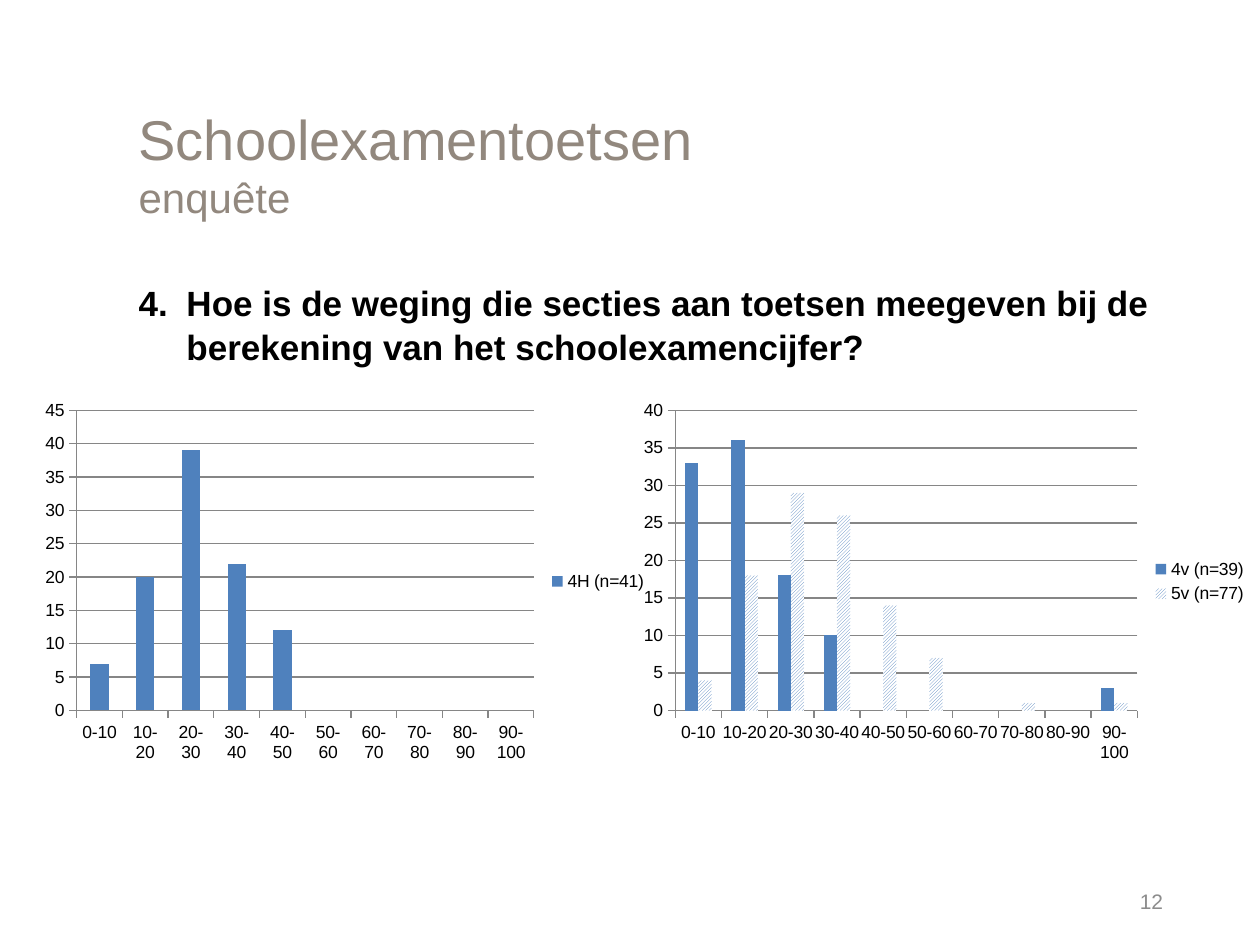
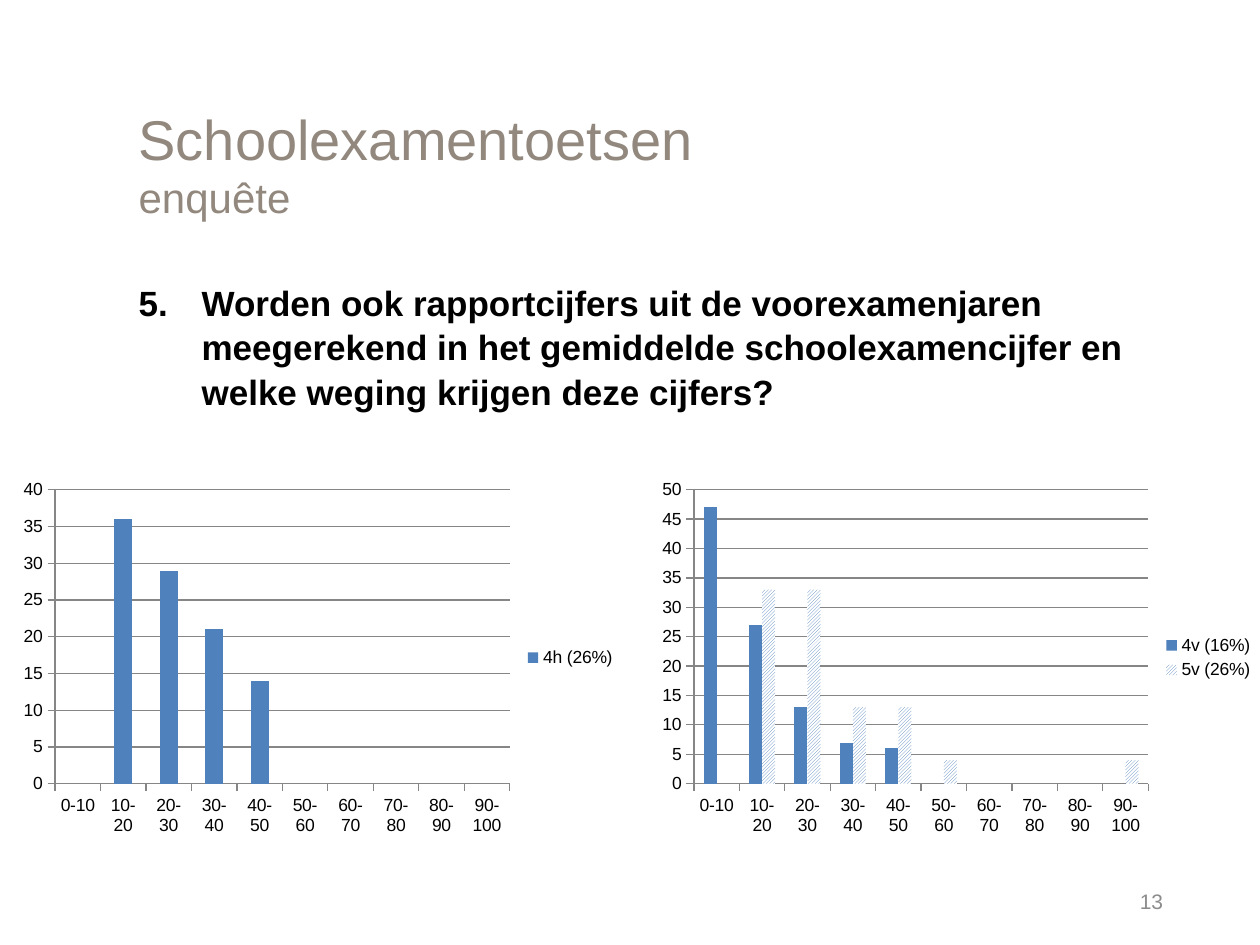
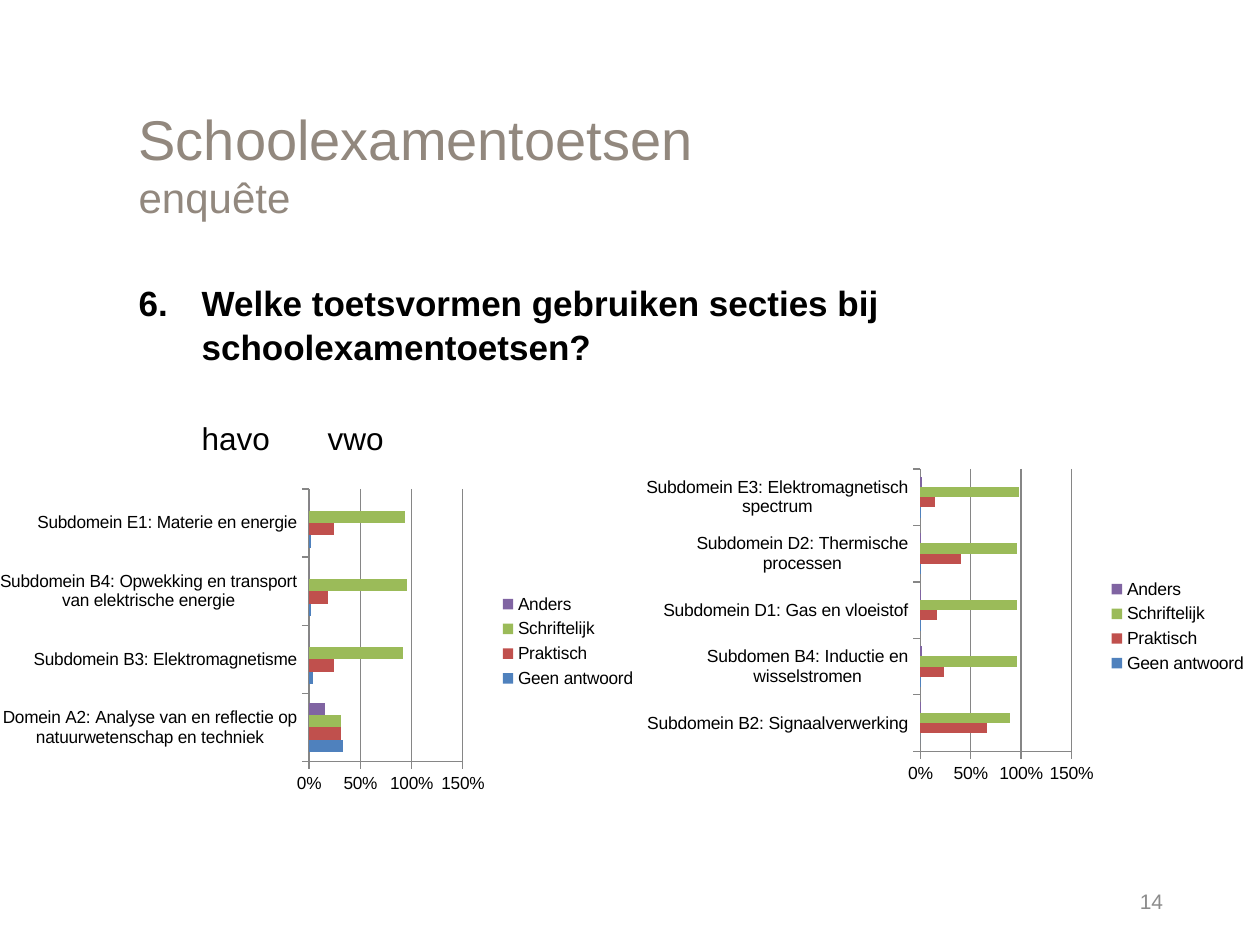
from lxml.etree import SubElement
from pptx import Presentation
from pptx.chart.data import CategoryChartData
from pptx.dml.color import RGBColor
from pptx.enum.chart import XL_CHART_TYPE, XL_LEGEND_POSITION, XL_TICK_MARK
from pptx.enum.dml import MSO_PATTERN
from pptx.enum.text import MSO_ANCHOR, MSO_AUTO_SIZE, PP_ALIGN
from pptx.oxml.ns import qn
from pptx.util import Inches, Pt

FONT = "Arial"
TAUPE, BLACK, WHITE, GRAY = "92887E", "000000", "FFFFFF", "8C8C8C"
BLUE, RED, GREEN, PURPLE = "4F81BD", "C0504D", "9BBB59", "8064A2"
AXIS_GRAY = "868686"
HATCHED = "hatched"

WEIGHT_RANGES = [f"{start}-{start + 10}" for start in range(0, 100, 10)]
HAVO_DOMAINS = [
    "Domein A2: Analyse van en reflectie op natuurwetenschap en techniek",
    "Subdomein B3: Elektromagnetisme",
    "Subdomein B4: Opwekking en transport van elektrische energie",
    "Subdomein E1: Materie en energie",
]
VWO_DOMAINS = [
    "Subdomein B2: Signaalverwerking",
    "Subdomen B4: Inductie en wisselstromen",
    "Subdomein D1: Gas en vloeistof",
    "Subdomein D2: Thermische processen",
    "Subdomein E3: Elektromagnetisch spectrum",
]
TEST_FORMS = [("Geen antwoord", BLUE), ("Praktisch", RED),
              ("Schriftelijk", GREEN), ("Anders", PURPLE)]


def rgb(value):
    return RGBColor.from_string(value)


def place(part, left, top, width, height):
    part.left, part.top = Inches(left), Inches(top)
    part.width, part.height = Inches(width), Inches(height)


def style_font(font, size, color, bold=False):
    font.name = FONT
    font.size = Pt(size)
    font.bold = bold
    font.color.rgb = rgb(color)


def add_run(paragraph, text, size, color, bold=False):
    run = paragraph.add_run()
    run.text = text
    style_font(run.font, size, color, bold)


def add_title(slide):
    title = slide.shapes.title
    place(title, 1, 0.67, 8.33, 1.25)
    frame = title.text_frame
    frame.auto_size = MSO_AUTO_SIZE.NONE
    frame.vertical_anchor = MSO_ANCHOR.MIDDLE
    heading = frame.paragraphs[0]
    heading.alignment = PP_ALIGN.LEFT
    add_run(heading, "Schoolexamentoetsen", 32, TAUPE)
    heading.add_line_break()
    add_run(heading, "enquête", 24, TAUPE)


def add_question(slide, number, text, indent):
    body = slide.placeholders[1]
    place(body, 1, 2.17, 8.33, 4.5)
    frame = body.text_frame
    frame.auto_size = MSO_AUTO_SIZE.NONE
    question = frame.paragraphs[0]
    properties = question._p.get_or_add_pPr()
    properties.set("marL", str(Inches(indent)))
    properties.set("indent", str(-Inches(indent)))
    SubElement(properties, qn("a:buFont"), typeface=FONT)
    SubElement(properties, qn("a:buAutoNum"), type="arabicPeriod", startAt=str(number))
    question.space_before = Pt(0)
    question.line_spacing = 1.05
    add_run(question, text, 20, BLACK, bold=True)
    return frame


def add_school_types(frame, labels):
    heading = frame.add_paragraph()
    properties = heading._p.get_or_add_pPr()
    properties.set("marL", "0")
    properties.set("indent", "0")
    SubElement(properties, qn("a:buNone"))
    stops = SubElement(properties, qn("a:tabLst"))
    for label, position in labels:
        SubElement(stops, qn("a:tab"), pos=str(Inches(position)), algn="l")
        add_run(heading, f"\t{label}", 18, BLACK)
    heading.space_before = Pt(29)


def add_page_number(slide, number):
    footer = slide.shapes.add_textbox(Inches(7.5), Inches(6.95), Inches(1.83), Inches(0.4))
    frame = footer.text_frame
    frame.word_wrap = True
    frame.vertical_anchor = MSO_ANCHOR.MIDDLE
    frame.paragraphs[0].alignment = PP_ALIGN.RIGHT
    add_run(frame.paragraphs[0], str(number), 12, GRAY)


def fill_series(series, color):
    fill = series.format.fill
    if color == HATCHED:
        fill.patterned()
        fill.pattern = MSO_PATTERN.LIGHT_UPWARD_DIAGONAL
        fill.fore_color.rgb = rgb(BLUE)
        fill.back_color.rgb = rgb(WHITE)
    else:
        fill.solid()
        fill.fore_color.rgb = rgb(color)
    series.invert_if_negative = False


def style_line(line):
    line.color.rgb = rgb(AXIS_GRAY)
    line.width = Pt(0.75)


def add_bars(slide, kind, area, categories, answers, number_format="General"):
    data = CategoryChartData(number_format=number_format)
    data.categories = categories
    for name, values, _ in answers:
        data.add_series(name, values)
    chart = slide.shapes.add_chart(kind, *map(Inches, area), data).chart
    style_font(chart.font, 10, BLACK)
    chart.has_title = False
    chart.has_legend = True
    chart.legend.position = XL_LEGEND_POSITION.RIGHT
    chart.legend.include_in_layout = False
    for axis in (chart.category_axis, chart.value_axis):
        axis.major_tick_mark = XL_TICK_MARK.OUTSIDE
        axis.minor_tick_mark = XL_TICK_MARK.NONE
        style_line(axis.format.line)
    chart.value_axis.has_major_gridlines = True
    style_line(chart.value_axis.major_gridlines.format.line)
    labels = chart.value_axis.tick_labels
    labels.number_format = number_format
    labels.number_format_is_linked = False
    plot = chart.plots[0]
    plot.gap_width = 150
    plot.overlap = 0
    plot.vary_by_categories = False
    for series, (_, _, color) in zip(plot.series, answers):
        fill_series(series, color)


def add_weights(slide, area, answers):
    padded = [(name, values + [None] * (len(WEIGHT_RANGES) - len(values)), color)
              for name, values, color in answers]
    add_bars(slide, XL_CHART_TYPE.COLUMN_CLUSTERED, area, WEIGHT_RANGES, padded)


def add_test_forms(slide, area, domains, shares):
    answers = [(name, values, color) for (name, color), values in zip(TEST_FORMS, shares)]
    add_bars(slide, XL_CHART_TYPE.BAR_CLUSTERED, area, domains, answers, "0%")


def add_survey_slide(deck, page, number, question, indent=0.5):
    slide = deck.slides.add_slide(deck.slide_layouts[1])
    add_title(slide)
    frame = add_question(slide, number, question, indent)
    add_page_number(slide, page)
    return slide, frame


def main():
    deck = Presentation()
    deck.slide_width, deck.slide_height = Inches(10), Inches(7.5)

    weighting, _ = add_survey_slide(
        deck, 12, 4,
        "Hoe is de weging die secties aan toetsen meegeven bij de berekening van het "
        "schoolexamencijfer?", indent=0.38)
    add_weights(weighting, (0.26, 3.12, 4.98, 2.99),
                [("4H (n=41)", [7, 20, 39, 22, 12], BLUE)])
    add_weights(weighting, (5.01, 3.12, 4.99, 2.99), [
        ("4v (n=39)", [33, 36, 18, 10, None, None, None, None, None, 3], BLUE),
        ("5v (n=77)", [4, 18, 29, 26, 14, 7, None, 1, None, 1], HATCHED),
    ])

    report_grades, _ = add_survey_slide(
        deck, 13, 5,
        "Worden ook rapportcijfers uit de voorexamenjaren meegerekend in het gemiddelde "
        "schoolexamencijfer en welke weging krijgen deze cijfers?")
    add_weights(report_grades, (0.09, 3.75, 4.9, 2.94),
                [("4h (26%)", [None, 36, 29, 21, 14], BLUE)])
    add_weights(report_grades, (5.16, 3.75, 4.89, 2.94), [
        ("4v (16%)", [47, 27, 13, 7, 6], BLUE),
        ("5v (26%)", [None, 33, 33, 13, 13, 4, None, None, None, 4], HATCHED),
    ])

    test_forms, frame = add_survey_slide(
        deck, 14, 6, "Welke toetsvormen gebruiken secties bij schoolexamentoetsen?")
    add_school_types(frame, [("havo", 1), ("vwo", 6)])
    add_test_forms(test_forms, (0, 3.83, 5.15, 2.52), HAVO_DOMAINS, [
        [0.33, 0.04, 0.02, 0.02],
        [0.31, 0.24, 0.18, 0.24],
        [0.31, 0.92, 0.96, 0.94],
        [0.16, 0, 0, 0],
    ])
    add_test_forms(test_forms, (5.03, 3.67, 4.97, 2.6), VWO_DOMAINS, [
        [0, 0.01, 0.01, 0.01, 0.01],
        [0.66, 0.23, 0.16, 0.4, 0.14],
        [0.89, 0.96, 0.96, 0.96, 0.98],
        [0.01, 0.02, 0.01, 0.01, 0.02],
    ])

    deck.save("out.pptx")


if __name__ == "__main__":
    main()
